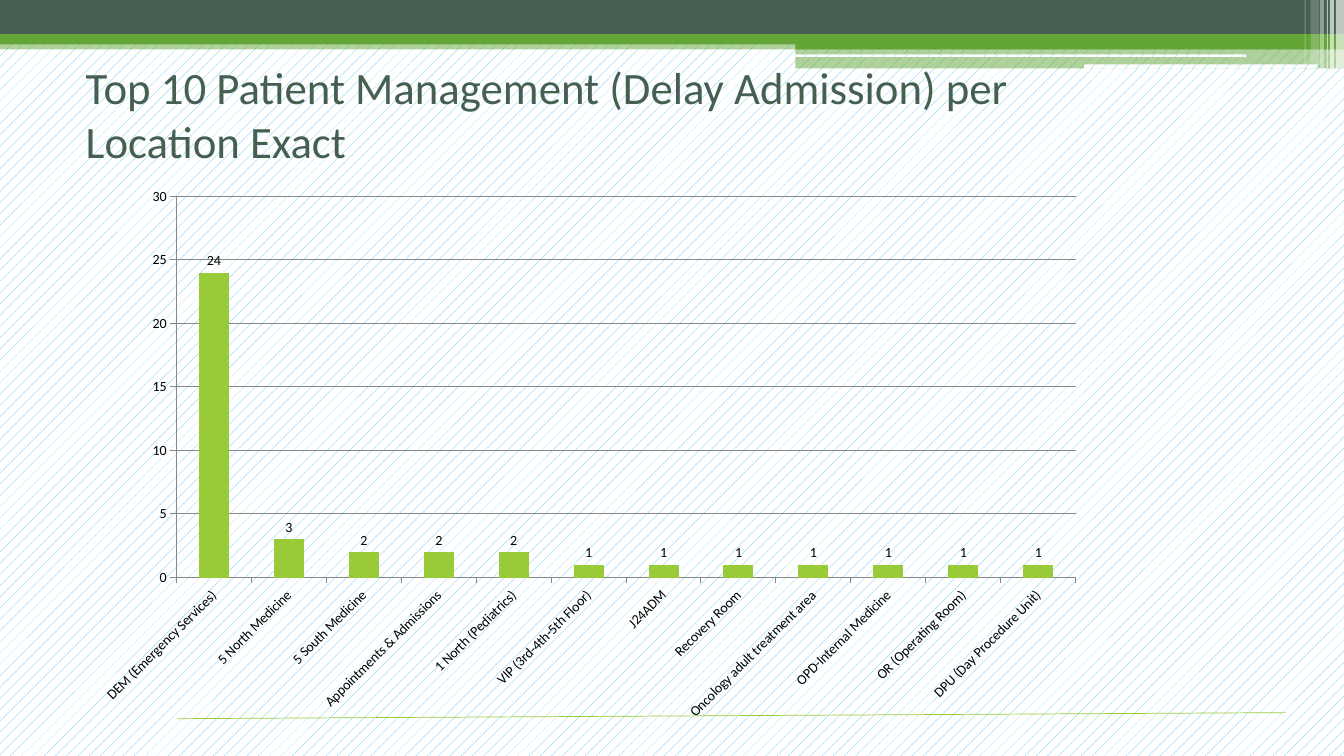
import pptx
import pptx.util
import pptx.chart.data
from lxml import etree
from pptx.dml.color import RGBColor
from pptx.enum.chart import XL_CHART_TYPE, XL_LABEL_POSITION, XL_TICK_MARK
from pptx.enum.dml import MSO_PATTERN
from pptx.enum.shapes import MSO_CONNECTOR, MSO_SHAPE
from pptx.enum.text import MSO_ANCHOR, MSO_AUTO_SIZE, PP_ALIGN
from pptx.oxml.ns import qn
from pptx.util import Inches, Pt

SLATE = RGBColor(0x45, 0x5F, 0x51)
GREEN = RGBColor(0x63, 0xA5, 0x37)
LIME = RGBColor(0x99, 0xCB, 0x38)
SKY = RGBColor(0x51, 0xC3, 0xF9)
GRAY = RGBColor(0x87, 0x87, 0x87)
WHITE = RGBColor(0xFF, 0xFF, 0xFF)
BLACK = RGBColor(0, 0, 0)
FONT = "Calibri"

DELAYS = {
    "DEM (Emergency Services)": 24,
    "5 North Medicine": 3,
    "5 South Medicine": 2,
    "Appointments & Admissions": 2,
    "1 North (Pediatrics)": 2,
    "VIP (3rd-4th-5th Floor)": 1,
    "J24ADM": 1,
    "Recovery Room": 1,
    "Oncology adult treatment area": 1,
    "OPD-Internal Medicine": 1,
    "OR (Operating Room)": 1,
    "DPU (Day Procedure Unit)": 1,
}

# left, top, width, height, colour, opacity in percent
BANDS = [
    (0, 0.4, 13.33, 0.09, GREEN, 50),
    (0, 0, 13.33, 0.34, SLATE, 100),
    (0, 0.34, 13.33, 0.1, GREEN, 100),
    (7.89, 0.39, 5.44, 0.1, GREEN, 100),
    (7.89, 0.48, 5.44, 0.2, GREEN, 50),
]
SLOTS = [(7.89, 0.54, 4.47, 0.03), (10.75, 0.64, 2.33, 0.04)]
# left, width, height, opacity in percent
STRIPES = [
    (13.25, 0.08, 0.68, 65),
    (13.19, 0.04, 0.68, 65),
    (13.16, 0.01, 0.68, 60),
    (13.09, 0.04, 0.68, 40),
    (13, 0.08, 0.64, 20),
    (12.94, 0.01, 0.64, 30),
]


def set_font(font, size, color):
    font.name = FONT
    font.size = Pt(size)
    font.color.rgb = color


def set_pattern(fill):
    fill.patterned()
    fill.pattern = MSO_PATTERN.PERCENT_10
    fill.fore_color.rgb = SKY
    fill.back_color.rgb = WHITE


def write_text(frame, text, size=18, color=BLACK, align=PP_ALIGN.LEFT):
    para = frame.paragraphs[0]
    para.alignment = align
    for number, line in enumerate(text.split("\n")):
        if number:
            para.add_line_break()
        span = para.add_run()
        span.text = line
        set_font(span.font, size, color)


class SlideBuilder:
    def __init__(self, deck):
        self.page = deck.slides.add_slide(deck.slide_layouts[5])
        set_pattern(self.page.background.fill)

    def box(self, left, top, width, height, color=None, opacity=100):
        """Add a solid rectangle, or a patterned rounded one if no colour is given."""
        kind = MSO_SHAPE.RECTANGLE if color else MSO_SHAPE.ROUNDED_RECTANGLE
        box = self.page.shapes.add_shape(
            kind, Inches(left), Inches(top), Inches(width), Inches(height))
        box.shadow.inherit = False
        box.line.fill.background()
        if not color:
            set_pattern(box.fill)
            return
        box.fill.solid()
        box.fill.fore_color.rgb = color
        if opacity < 100:
            tint = box._element.spPr.find(".//" + qn("a:srgbClr"))
            etree.SubElement(tint, qn("a:alpha"), val=str(opacity * 1000))

    def line(self, x1, y1, x2, y2, color, weight):
        line = self.page.shapes.add_connector(
            MSO_CONNECTOR.STRAIGHT, Inches(x1), Inches(y1), Inches(x2), Inches(y2))
        line.line.color.rgb = color
        line.line.width = Pt(weight)
        etree.SubElement(line._element.spPr, qn("a:effectLst"))

    def title(self, text, left, top, width, height):
        title = self.page.shapes.title
        title.left, title.top = Inches(left), Inches(top)
        title.width, title.height = Inches(width), Inches(height)
        frame = title.text_frame
        frame.word_wrap = True
        frame.auto_size = MSO_AUTO_SIZE.NONE
        frame.vertical_anchor = MSO_ANCHOR.MIDDLE
        write_text(frame, text, size=32, color=SLATE)
        self.page.shapes._spTree.append(title._element)  # in front of the bands

    def column_chart(self, values, left, top, width, height):
        data = pptx.chart.data.CategoryChartData()
        data.categories = list(values)
        data.add_series("Series 1", list(values.values()))
        chart = self.page.shapes.add_chart(
            XL_CHART_TYPE.COLUMN_CLUSTERED, Inches(left), Inches(top),
            Inches(width), Inches(height), data).chart
        chart.has_title = False
        chart.has_legend = False
        set_font(chart.font, 10, BLACK)

        plot = chart.plots[0]
        plot.gap_width = 150
        plot.vary_by_categories = False
        fill = plot.series[0].format.fill
        fill.solid()
        fill.fore_color.rgb = LIME
        plot.has_data_labels = True
        labels = plot.data_labels
        labels.show_value = True
        labels.position = XL_LABEL_POSITION.OUTSIDE_END
        set_font(labels.font, 10, BLACK)

        for axis in (chart.category_axis, chart.value_axis):
            axis.major_tick_mark = XL_TICK_MARK.OUTSIDE
            axis.minor_tick_mark = XL_TICK_MARK.NONE
            axis.format.line.color.rgb = GRAY
            set_font(axis.tick_labels.font, 10, BLACK)
        body = chart.category_axis._element.find(".//" + qn("a:bodyPr"))
        body.set("rot", "-2700000")
        body.set("vert", "horz")

        scale = chart.value_axis
        scale.minimum_scale, scale.maximum_scale, scale.major_unit = 0, 30, 5
        scale.has_major_gridlines = True
        scale.major_gridlines.format.line.color.rgb = GRAY


def main():
    deck = pptx.Presentation()
    deck.slide_width, deck.slide_height = Inches(13.33), Inches(7.5)
    builder = SlideBuilder(deck)
    for band in BANDS:
        builder.box(*band)
    for slot in SLOTS:
        builder.box(*slot)
    for left, width, height, opacity in STRIPES:
        builder.box(left, 0, width, height, WHITE, opacity)
    builder.line(1.76, 7.13, 12.75, 7.07, LIME, 0.5)
    builder.title("Top 10 Patient Management (Delay Admission) per\nLocation Exact",
                  0.75, 0.5, 11.37, 1.26)
    builder.column_chart(DELAYS, 0.83, 1.76, 10.04, 5.49)
    deck.save("out.pptx")


if __name__ == "__main__":
    main()
